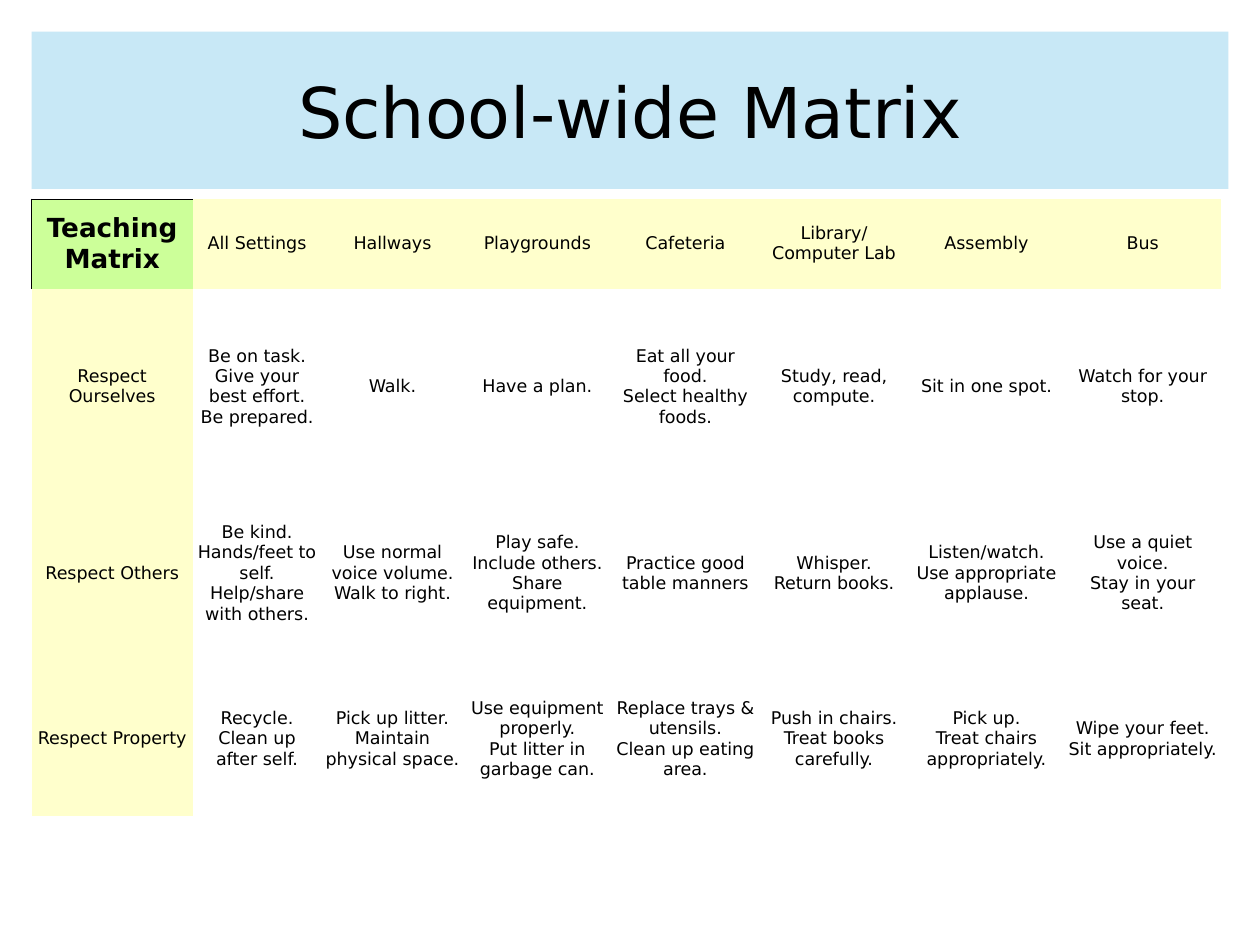
from dataclasses import dataclass

from lxml import etree
from pptx import Presentation
from pptx.dml.color import RGBColor
from pptx.enum.text import MSO_ANCHOR, MSO_AUTO_SIZE, PP_ALIGN
from pptx.oxml.ns import qn
from pptx.util import Inches, Pt

MIDDLE = MSO_ANCHOR.MIDDLE
NO_AUTOFIT = MSO_AUTO_SIZE.NONE
CENTER = PP_ALIGN.CENTER
TITLE_ONLY = 5
PLAIN_TABLE_STYLE = "{2D5ABB26-0587-4C30-8999-92F81FD0307C}"

SLIDE_WIDTH, SLIDE_HEIGHT = 10, 7.5
MARGIN = SLIDE_WIDTH / 40
BANNER_HEIGHT = SLIDE_HEIGHT / 6
MATRIX_TOP = 1.58
COLUMN_WIDTHS = [1.28, 1.02, 1.13, 1.17, 1.18, 1.18, 1.24, 1.24]
ROW_HEIGHTS = [0.71, 1.56, 1.4, 1.23]

MATRIX = [
    ["Teaching Matrix", "All Settings", "Hallways", "Playgrounds", "Cafeteria",
     "Library/\nComputer Lab", "Assembly", "Bus"],
    ["Respect Ourselves",
     "Be on task.\nGive your best effort.\nBe prepared.",
     "Walk.",
     "Have a plan.",
     "Eat all your food.\nSelect healthy foods.",
     "Study, read, compute.",
     "Sit in one spot.",
     "Watch for your stop."],
    ["Respect Others",
     "Be kind.\nHands/feet to self.\nHelp/share with others.",
     "Use normal voice volume.\nWalk to right.",
     "Play safe.\nInclude others.\nShare equipment.",
     "Practice good table manners",
     "Whisper.\nReturn books.",
     "Listen/watch.\nUse appropriate applause.",
     "Use a quiet voice.\nStay in your seat."],
    ["Respect Property",
     "Recycle.\nClean up after self.",
     "Pick up litter.\nMaintain physical space.",
     "Use equipment properly.\nPut litter in garbage can.",
     "Replace trays & utensils.\nClean up eating area.",
     "Push in chairs.\nTreat books carefully.",
     "Pick up.\nTreat chairs appropriately.",
     "Wipe your feet.\nSit appropriately."],
]


@dataclass(frozen=True)
class Theme:
    """Colours, font and type sizes of the slide."""
    font: str = "DejaVu Sans"
    ink: str = "000000"
    banner: str = "A9DCF2"
    banner_opacity: int = 64
    corner: str = "CCFF99"
    heading: str = "FFFFCC"
    body: str = "FFFFFF"
    title_size: int = 40
    corner_size: int = 15
    cell_size: int = 10
    border_width: float = 0.75


THEME = Theme()


def paint(fill, color):
    """Give a fill one solid colour."""
    fill.solid()
    fill.fore_color.rgb = RGBColor.from_string(color)


def write(frame, text, size, bold=False):
    """Set centred text and format its runs."""
    frame.text = text
    for paragraph in frame.paragraphs:
        paragraph.alignment = CENTER
        for run in paragraph.runs:
            run.font.name = THEME.font
            run.font.size = Pt(size)
            run.font.bold = bold
            run.font.color.rgb = RGBColor.from_string(THEME.ink)


def set_insets(holder, inset):
    """Use the same inset on all four sides."""
    holder.margin_left = holder.margin_right = Inches(inset)
    holder.margin_top = holder.margin_bottom = Inches(inset)


def add_border(cell, sides):
    """Draw thin lines on the given sides of a cell."""
    properties = cell._tc.get_or_add_tcPr()
    for position, side in enumerate(sides):
        line = etree.Element(qn(f"a:ln{side}"), w=str(Pt(THEME.border_width)))
        solid = etree.SubElement(line, qn("a:solidFill"))
        etree.SubElement(solid, qn("a:srgbClr"), val=THEME.ink)
        properties.insert(position, line)


def format_title(title):
    """Turn the title placeholder into a tinted banner."""
    title.left = title.top = Inches(MARGIN)
    title.width = Inches(SLIDE_WIDTH - 2 * MARGIN)
    title.height = Inches(BANNER_HEIGHT)
    paint(title.fill, THEME.banner)
    tint = title._element.spPr.find(qn("a:solidFill"))[0]
    etree.SubElement(tint, qn("a:alpha"), val=str(THEME.banner_opacity * 1000))
    frame = title.text_frame
    frame.auto_size = NO_AUTOFIT
    frame.word_wrap = True
    frame.vertical_anchor = MIDDLE
    set_insets(frame, 0.05)
    write(frame, "School-wide Matrix", THEME.title_size)


def fill_cell(cell, text, is_corner, is_heading):
    """Write and colour one cell by its role in the matrix."""
    cell.vertical_anchor = MIDDLE
    set_insets(cell, 0.03)
    if is_corner:
        paint(cell.fill, THEME.corner)
        write(cell.text_frame, text, THEME.corner_size, bold=True)
        add_border(cell, "LT")
    else:
        paint(cell.fill, THEME.heading if is_heading else THEME.body)
        write(cell.text_frame, text, THEME.cell_size)


def add_matrix(slide):
    """Add the table of expectations by setting."""
    matrix = slide.shapes.add_table(
        len(ROW_HEIGHTS), len(COLUMN_WIDTHS), Inches(MARGIN), Inches(MATRIX_TOP),
        Inches(sum(COLUMN_WIDTHS)), Inches(sum(ROW_HEIGHTS))).table
    matrix.first_row = matrix.horz_banding = False
    matrix._tbl.tblPr.find(qn("a:tableStyleId")).text = PLAIN_TABLE_STYLE
    for column, width in zip(matrix.columns, COLUMN_WIDTHS):
        column.width = Inches(width)
    for row, height in zip(matrix.rows, ROW_HEIGHTS):
        row.height = Inches(height)
    for r, expectations in enumerate(MATRIX):
        for c, text in enumerate(expectations):
            fill_cell(matrix.cell(r, c), text, r == c == 0, r == 0 or c == 0)


def main():
    """Build and save the slide."""
    deck = Presentation()
    deck.slide_width, deck.slide_height = Inches(SLIDE_WIDTH), Inches(SLIDE_HEIGHT)
    slide = deck.slides.add_slide(deck.slide_layouts[TITLE_ONLY])
    add_matrix(slide)
    format_title(slide.shapes.title)
    deck.save("out.pptx")


if __name__ == "__main__":
    main()
